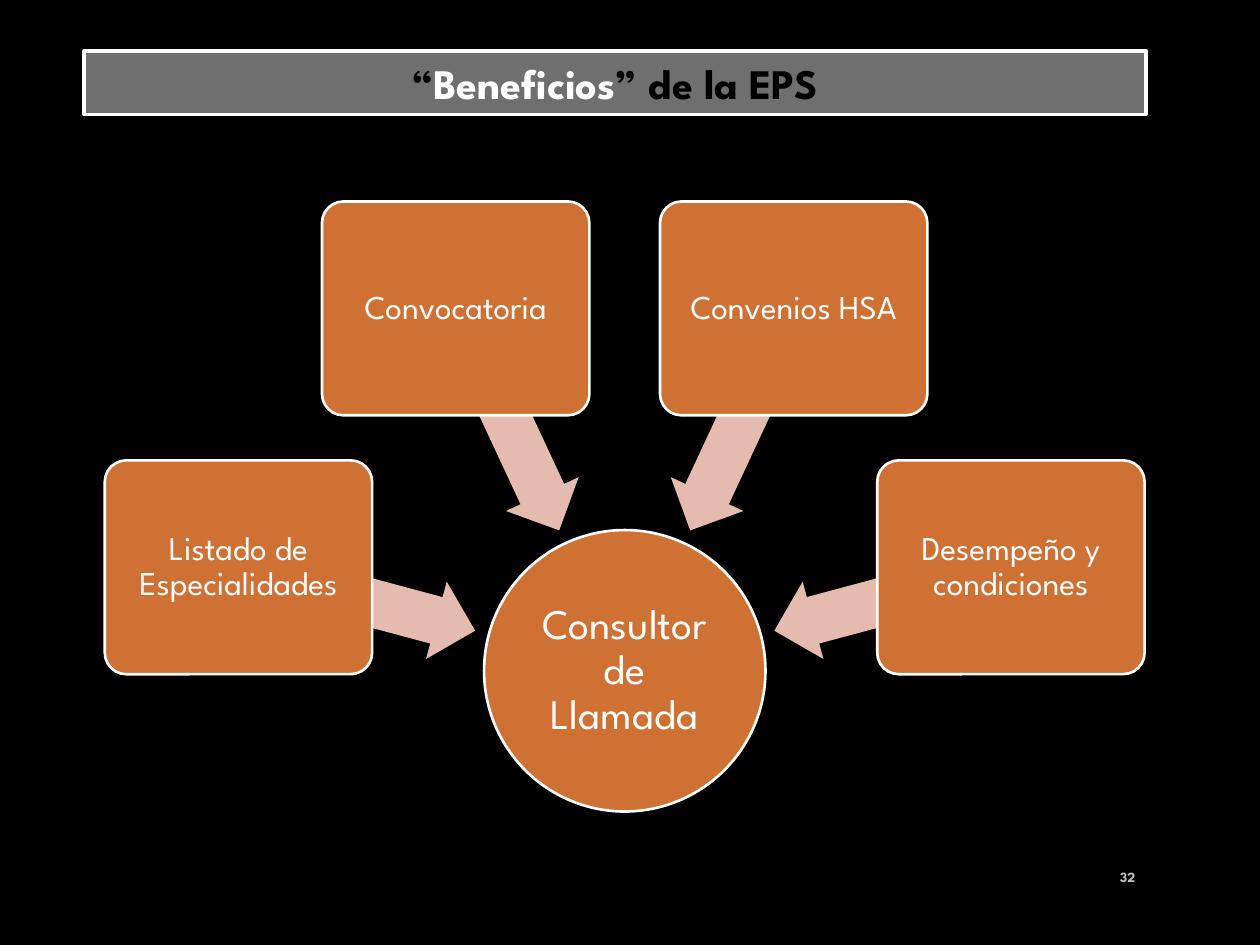
import math

import pptx
import pptx.dml.color
import pptx.enum.shapes
import pptx.enum.text
import pptx.util

Pt = pptx.util.Pt
SHAPE = pptx.enum.shapes.MSO_SHAPE
ALIGN = pptx.enum.text.PP_ALIGN
ANCHOR = pptx.enum.text.MSO_ANCHOR
AUTOSIZE = pptx.enum.text.MSO_AUTO_SIZE

FONT = "League Spartan"
BLACK, WHITE, ORANGE, PINK = "000000", "FFFFFF", "CF7133", "E4BBAE"
GRAY, LIGHT_GRAY = "6F6F6F", "BFBFBF"

TITLE = [("“", BLACK), ("Beneficios", WHITE), ("” de la EPS", BLACK)]
PAGE_NUMBER = "32"
HUB = "Consultor de Llamada"
FACTORS = [  # text, direction from the hub in degrees
    ("Listado de Especialidades", 195),
    ("Convocatoria", 245),
    ("Convenios HSA", 295),
    ("Desempeño y condiciones", 345),
]

HUB_X, HUB_Y, HUB_SIZE = 357, 383.3, 160.8
BOX_W, BOX_H, BOX_RADIUS = 152.8, 122.2, 228.5
ARROW_W, ARROW_H, ARROW_RADIUS = 140.4, 45.8, 158.7


def rgb(value):
    return pptx.dml.color.RGBColor.from_string(value)


def set_all(target, values):
    for name, value in values.items():
        setattr(target, name, value)


def add_shape(s, kind, x, y, w, h, fill, line_width=0, adjustments=()):
    sp = s.shapes.add_shape(kind, Pt(x), Pt(y), Pt(w), Pt(h))
    sp.shadow.inherit = False
    sp.fill.solid()
    sp.fill.fore_color.rgb = rgb(fill)
    if line_width:
        sp.line.color.rgb = rgb(WHITE)
        sp.line.width = Pt(line_width)
    else:
        sp.line.fill.background()
    for i, value in enumerate(adjustments):
        sp.adjustments[i] = value
    return sp


def add_centered(s, kind, x, y, w, h, *style):
    return add_shape(s, kind, x - w / 2, y - h / 2, w, h, *style)


def write(sp, runs, size, bold=False, align=ALIGN.CENTER, spacing=None, **frame):
    tf = sp.text_frame
    set_all(tf, {"word_wrap": True, "vertical_anchor": ANCHOR.MIDDLE, **frame})
    p = tf.paragraphs[0]
    set_all(p, {"alignment": align, "line_spacing": spacing})
    for text, color in runs:
        r = p.add_run()
        r.text = text
        set_all(r.font, {"name": FONT, "size": Pt(size), "bold": bold})
        r.font.color.rgb = rgb(color)


def write_label(sp, text, size, inset):
    sides = ("left", "top", "right", "bottom")
    margins = {f"margin_{side}": Pt(inset) for side in sides}
    write(sp, [(text, WHITE)], size, spacing=0.9, **margins)


def polar(radius, degrees):
    """Point at a distance and direction from the hub's centre."""
    angle = math.radians(degrees)
    return HUB_X + radius * math.cos(angle), HUB_Y + radius * math.sin(angle)


def main():
    prs = pptx.Presentation()
    set_all(prs, {"slide_width": Pt(720), "slide_height": Pt(540)})
    s = prs.slides.add_slide(prs.slide_layouts[6])
    s.background.fill.solid()
    s.background.fill.fore_color.rgb = rgb(BLACK)

    number = s.shapes.add_textbox(Pt(623.5), Pt(486.7), Pt(32.4), Pt(28.8))
    write(number, [(PAGE_NUMBER, LIGHT_GRAY)], 8, True, ALIGN.RIGHT)

    title = add_shape(s, SHAPE.RECTANGLE, 48, 29.2, 607, 36.3, GRAY, 2)
    write(title, TITLE, 24, True, vertical_anchor=ANCHOR.TOP,
          auto_size=AUTOSIZE.SHAPE_TO_FIT_TEXT)

    hub = add_centered(s, SHAPE.OVAL, HUB_X, HUB_Y, HUB_SIZE, HUB_SIZE, ORANGE, 1.5)
    write_label(hub, HUB, 24, 1.2)

    for text, degrees in FACTORS:
        arrow = add_centered(s, SHAPE.LEFT_ARROW, *polar(ARROW_RADIUS, degrees),
                             ARROW_W, ARROW_H, PINK, 0, (0.6, 0.5))
        arrow.rotation = degrees
        box = add_centered(s, SHAPE.ROUNDED_RECTANGLE, *polar(BOX_RADIUS, degrees),
                           BOX_W, BOX_H, ORANGE, 1.5, (0.1,))
        write_label(box, text, 19, 2.9)

    prs.save("out.pptx")


if __name__ == "__main__":
    main()
